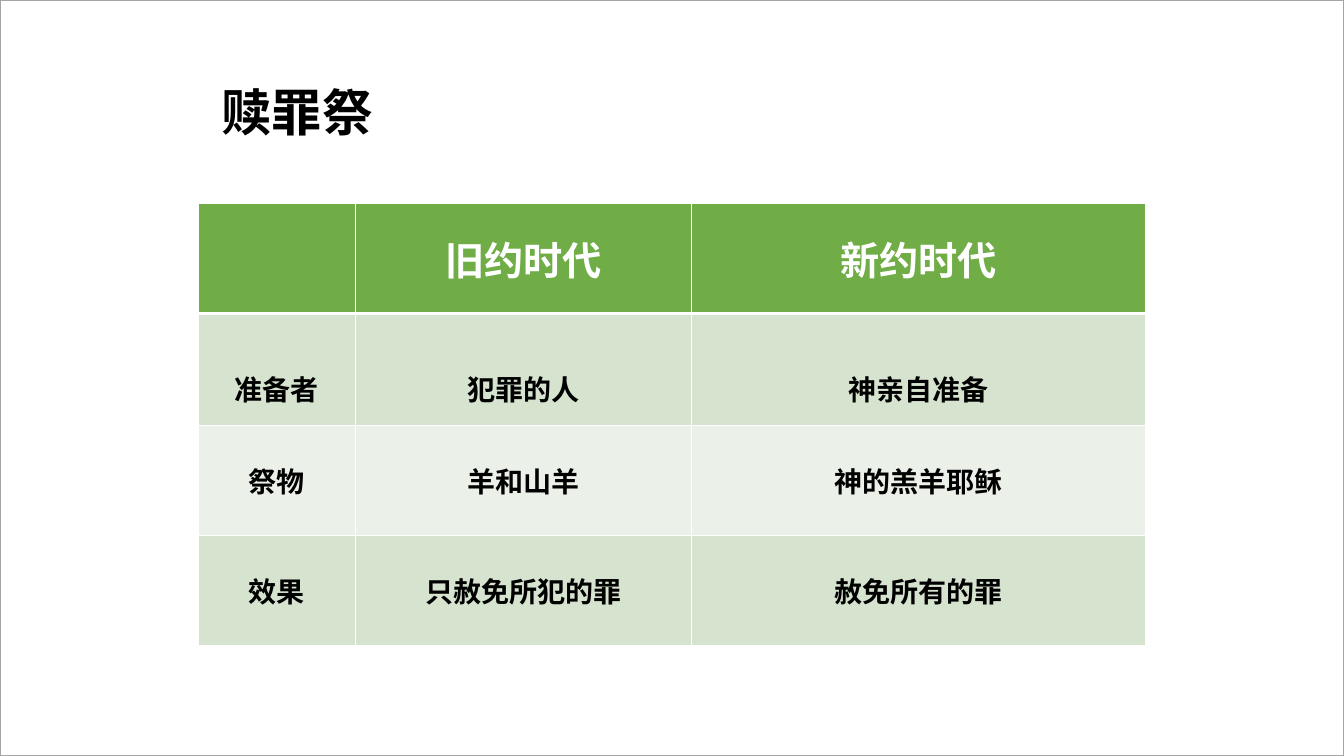
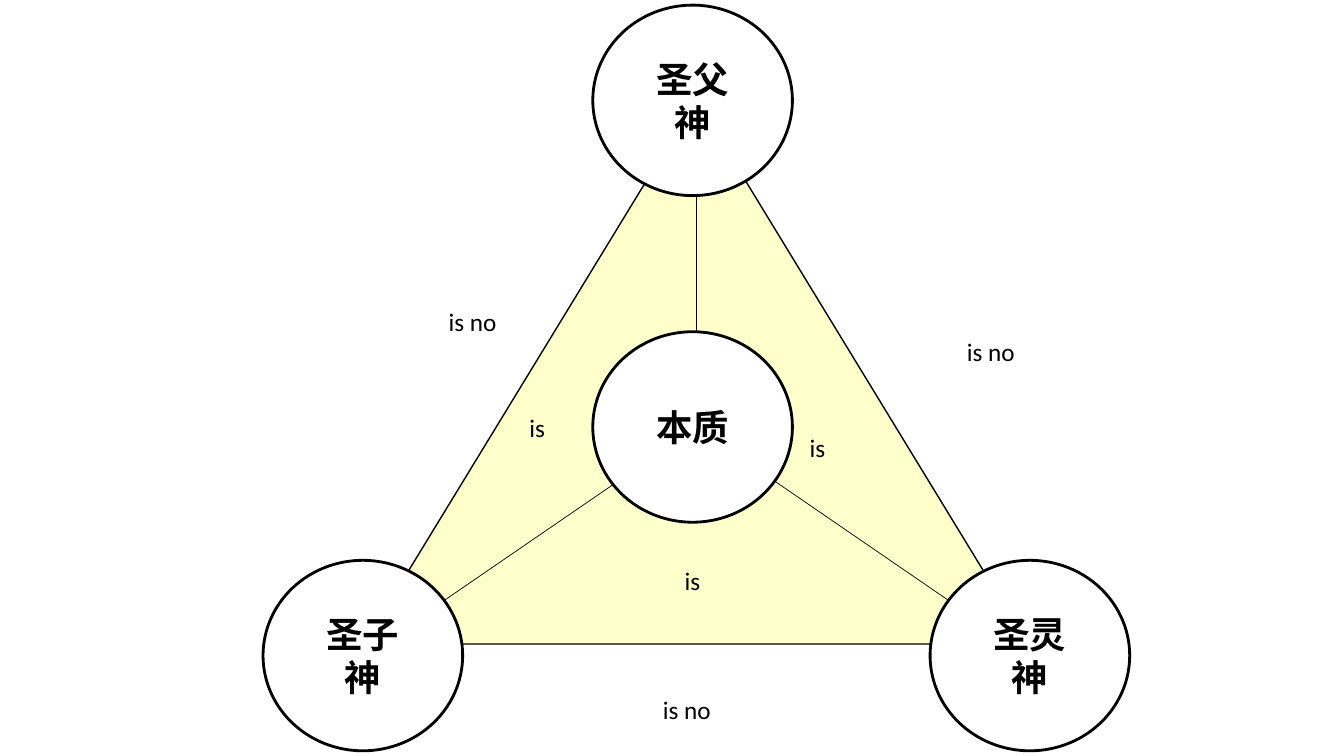
import dataclasses
import typing

import lxml.etree
import pptx
import pptx.dml.color
import pptx.enum.shapes
import pptx.enum.text
import pptx.oxml.ns
import pptx.util

Cm = pptx.util.Cm
Pt = pptx.util.Pt
Shape = pptx.enum.shapes.MSO_SHAPE
Align = pptx.enum.text.PP_ALIGN
Anchor = pptx.enum.text.MSO_ANCHOR
qn = pptx.oxml.ns.qn


@dataclasses.dataclass(frozen=True)
class Theme:
    black: str = "000000"
    white: str = "FFFFFF"
    grey: str = "A5A5A5"
    green: str = "70AD47"
    bands: tuple[str, str] = ("D5E3CF", "EBF1E9")
    yellow: str = "FFFF00"
    body: str = "Calibri"
    head: str = "Roboto"
    title: int = 36
    top: int = 28
    cell: int = 20
    node: int = 26
    label: int = 18


@dataclasses.dataclass(frozen=True)
class Box:
    left: float
    top: float
    width: float
    height: float

    def emu(self) -> tuple[int, int, int, int]:
        return Cm(self.left), Cm(self.top), Cm(self.width), Cm(self.height)


@dataclasses.dataclass(frozen=True)
class Style:
    size: int
    color: str = Theme.black
    bold: bool = True
    font: str = Theme.body
    align: typing.Any = Align.CENTER


@dataclasses.dataclass(frozen=True)
class Node:
    left: float
    top: float
    lines: tuple[str, ...]


@dataclasses.dataclass(frozen=True)
class Label:
    left: float
    top: float
    text: str


THEME = Theme()
PAGE = Box(0, 0, 33.87, 19.05)

GRID = Box(5, 5.13, 23.88, 11.13)
COLS = (3.96, 8.46, 11.46)
ROWS = (2.77, 2.82, 2.77, 2.77)
CELLS = (
    ("", "旧约时代", "新约时代"),
    ("准备者", "犯罪的人", "神亲自准备"),
    ("祭物", "羊和山羊", "神的羔羊耶稣"),
    ("效果", "只赦免所犯的罪", "赦免所有的罪"),
)
DROP = 1.07

HUB = (17.55, 10.77)
TIPS = ((17.55, 1.6), (9.14, 16.54), (25.96, 16.54))
NODES = (
    Node(14.94, 0.13, ("圣父", "神")),
    Node(6.63, 14.12, ("圣子", "神")),
    Node(23.44, 14.12, ("圣灵", "神")),
    Node(14.94, 8.36, ("本质",)),
)
LABELS = (
    Label(8.38, 7.59, "is no"),
    Label(21.44, 8.36, "is no"),
    Label(17.07, 10.77, "is"),
    Label(13.92, 14.12, "is"),
    Label(13.78, 17.37, "is no"),
    Label(10.01, 10.26, "is"),
)


def rgb(color: str) -> pptx.dml.color.RGBColor:
    return pptx.dml.color.RGBColor.from_string(color)


def write(frame: typing.Any, lines: typing.Sequence[str], style: Style) -> None:
    frame.word_wrap = True
    for index, line in enumerate(lines):
        para = frame.paragraphs[0] if index == 0 else frame.add_paragraph()
        para.alignment = style.align
        run = para.add_run()
        run.text = line
        run.font.name = style.font
        run.font.size = Pt(style.size)
        run.font.bold = style.bold
        run.font.color.rgb = rgb(style.color)


def add_form(slide: typing.Any, kind: typing.Any, box: Box, fill: str,
             line: str, width: float) -> typing.Any:
    form = slide.shapes.add_shape(kind, *box.emu())
    form.shadow.inherit = False
    form.fill.solid()
    form.fill.fore_color.rgb = rgb(fill)
    form.line.color.rgb = rgb(line)
    form.line.width = Pt(width)
    return form


def add_text(slide: typing.Any, box: Box, text: str, style: Style) -> None:
    frame = slide.shapes.add_textbox(*box.emu()).text_frame
    write(frame, (text,), style)


def add_spoke(slide: typing.Any, tip: tuple[float, float]) -> None:
    spoke = slide.shapes.add_connector(
        pptx.enum.shapes.MSO_CONNECTOR.STRAIGHT,
        *(Cm(value) for value in (*tip, *HUB)))
    spoke.line.color.rgb = rgb(THEME.black)
    spoke.line.width = Pt(0.5)
    lxml.etree.SubElement(spoke._element.spPr, qn("a:effectLst"))


def add_edges(cell: typing.Any, widths: dict[str, float]) -> None:
    props = cell._tc.get_or_add_tcPr()
    for index, (side, width) in enumerate(widths.items()):
        edge = lxml.etree.Element(qn(f"a:ln{side}"), w=str(Pt(width)))
        fill = lxml.etree.SubElement(edge, qn("a:solidFill"))
        lxml.etree.SubElement(fill, qn("a:srgbClr"), val=THEME.white)
        props.insert(index, edge)


def add_grid(slide: typing.Any) -> None:
    table = slide.shapes.add_table(len(ROWS), len(COLS), *GRID.emu()).table
    table.horz_banding = False
    for col, width in zip(table.columns, COLS):
        col.width = Cm(width)
    for index, (row, height, texts) in enumerate(zip(table.rows, ROWS, CELLS)):
        row.height = Cm(height)
        first = index == 0
        fill = THEME.green if first else THEME.bands[(index - 1) % 2]
        style = Style(THEME.top, THEME.white) if first else Style(THEME.cell)
        widths = {"L": 1, "R": 1, "T": 3 if index == 1 else 1,
                  "B": 3 if first else 1}
        for cell, text in zip(row.cells, texts):
            cell.fill.solid()
            cell.fill.fore_color.rgb = rgb(fill)
            cell.vertical_anchor = Anchor.MIDDLE
            if index == 1:
                cell.margin_top = Cm(DROP)
            if text:
                write(cell.text_frame, (text,), style)
            add_edges(cell, widths)


def draw_table(slide: typing.Any) -> None:
    add_form(slide, Shape.RECTANGLE, PAGE, THEME.white, THEME.grey, 1)
    add_grid(slide)
    add_text(slide, Box(5.33, 1.93, 9.19, 1.8), "赎罪祭",
             Style(THEME.title, font=THEME.head, align=Align.LEFT))


def draw_triad(slide: typing.Any) -> None:
    field = add_form(slide, Shape.ISOSCELES_TRIANGLE,
                     Box(9.17, 2.51, 16.74, 13.72),
                     THEME.yellow, THEME.black, 1)
    tint = field._element.spPr.find(qn("a:solidFill")).find(qn("a:srgbClr"))
    lxml.etree.SubElement(tint, qn("a:alpha"), val="20000")
    for tip in TIPS:
        add_spoke(slide, tip)
    for node in NODES:
        disc = add_form(slide, Shape.OVAL, Box(node.left, node.top, 5.03, 4.8),
                        THEME.white, THEME.black, 2)
        disc.text_frame.vertical_anchor = Anchor.MIDDLE
        write(disc.text_frame, node.lines, Style(THEME.node))
    for label in LABELS:
        add_text(slide, Box(label.left, label.top, 7.06, 1.02), label.text,
                 Style(THEME.label, bold=False))


def main() -> None:
    deck = pptx.Presentation()
    deck.slide_width = Cm(PAGE.width)
    deck.slide_height = Cm(PAGE.height)
    for draw in (draw_table, draw_triad):
        draw(deck.slides.add_slide(deck.slide_layouts[6]))
    deck.save("out.pptx")


if __name__ == "__main__":
    main()
